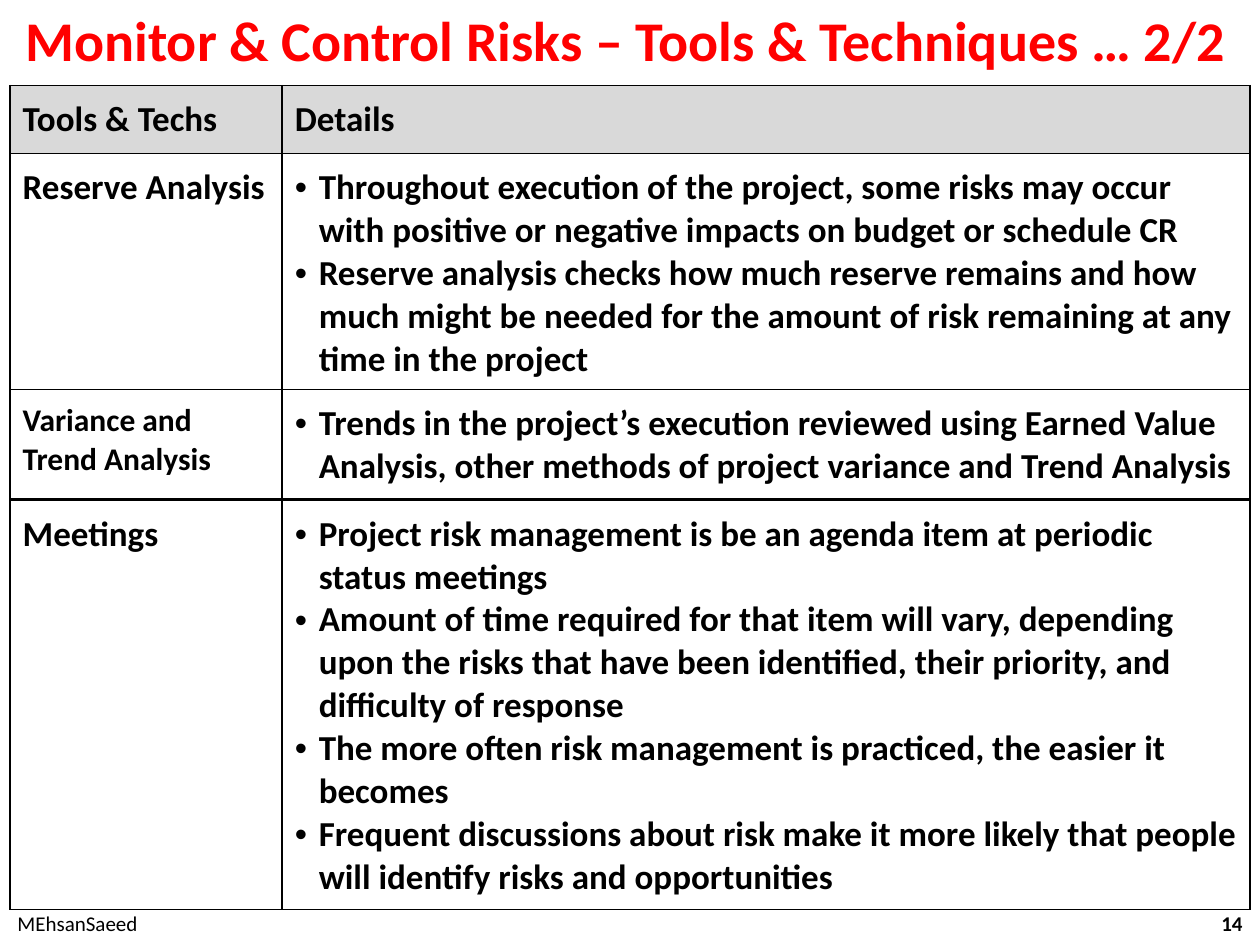
from lxml import etree
from pptx import Presentation
from pptx.dml.color import RGBColor
from pptx.enum.text import MSO_ANCHOR, PP_ALIGN
from pptx.oxml.ns import qn
from pptx.util import Inches, Pt

TOP, MIDDLE, BOTTOM = MSO_ANCHOR.TOP, MSO_ANCHOR.MIDDLE, MSO_ANCHOR.BOTTOM
LEFT, CENTER, RIGHT = PP_ALIGN.LEFT, PP_ALIGN.CENTER, PP_ALIGN.RIGHT
RED = RGBColor(0xFF, 0x00, 0x00)
BLACK = RGBColor(0x00, 0x00, 0x00)
GRAY = RGBColor(0xD9, 0xD9, 0xD9)

GRID_COLUMNS, GRID_ROWS = 100, 75
TABLE_LEFT = 0.8
TABLE_COLUMNS = (21.6, 76.8)

HEADER = ("Tools & Techs", ["Details"])
RESERVE = ("Reserve Analysis", [
    "Throughout execution of the project, some risks may occur with positive or negative impacts on budget or schedule CR",
    "Reserve analysis checks how much reserve remains and how much might be needed for the amount of risk remaining at any time in the project",
])
VARIANCE = ("Variance and Trend Analysis", [
    "Trends in the project’s execution reviewed using Earned Value Analysis, other methods of project variance and Trend Analysis",
])
MEETINGS = ("Meetings", [
    "Project risk management is be an agenda item at periodic status meetings",
    "Amount of time required for that item will vary, depending upon the risks that have been identified, their priority, and difficulty of response",
    "The more often risk management is practiced, the easier it becomes",
    "Frequent discussions about risk make it more likely that people will identify risks and opportunities",
])


class SlideBuilder:
    font = "Calibri"
    body_size = 20
    cell_margin = Inches(0.1)
    bullet_indent = Inches(0.19)
    border_width = Pt(1)

    def __init__(self, presentation):
        self.column = presentation.slide_width / GRID_COLUMNS
        self.row = presentation.slide_height / GRID_ROWS
        self.slide = presentation.slides.add_slide(presentation.slide_layouts[5])

    def box(self, left, top, width, height):
        return (round(left * self.column), round(top * self.row),
                round(width * self.column), round(height * self.row))

    def format_text(self, text_frame, size, color=BLACK, bold=True, align=LEFT):
        for paragraph in text_frame.paragraphs:
            paragraph.alignment = align
            for run in paragraph.runs:
                run.font.name = self.font
                run.font.size = Pt(size)
                run.font.bold = bold
                run.font.color.rgb = color

    def title(self, text):
        shape = self.slide.shapes.title
        shape.left, shape.top, shape.width, shape.height = self.box(0, 0, 100, 6.2)
        text_frame = shape.text_frame
        text_frame.text = text
        text_frame.vertical_anchor = MIDDLE
        text_frame.margin_left = Inches(0.2)
        text_frame.margin_right = text_frame.margin_top = text_frame.margin_bottom = 0
        self.format_text(text_frame, 32, RED)

    def footer(self, text, left, width, align, bold):
        shape = self.slide.shapes.add_textbox(*self.box(left, 71.3, width, 4))
        text_frame = shape.text_frame
        text_frame.word_wrap = True
        text_frame.vertical_anchor = MIDDLE
        text_frame.text = text
        self.format_text(text_frame, 12, bold=bold, align=align)

    def table(self, top, heights, entries, label_size=body_size):
        frame = self.slide.shapes.add_table(
            len(entries), len(TABLE_COLUMNS),
            *self.box(TABLE_LEFT, top, sum(TABLE_COLUMNS), sum(heights)))
        table = frame.table
        table.first_row = table.horz_banding = False
        for column, width in zip(table.columns, TABLE_COLUMNS):
            column.width = round(width * self.column)
        for index, (height, entry) in enumerate(zip(heights, entries)):
            table.rows[index].height = round(height * self.row)
            label, details = entry
            is_header = entry is HEADER
            self.cell(table.cell(index, 0), [label], label_size, is_header)
            self.cell(table.cell(index, 1), details, self.body_size, is_header,
                      bulleted=not is_header)

    def cell(self, cell, lines, size, is_header, bulleted=False):
        cell.margin_left = cell.margin_right = self.cell_margin
        cell.margin_top = cell.margin_bottom = self.cell_margin
        cell.vertical_anchor = BOTTOM if is_header else TOP
        cell.text_frame.text = "\n".join(lines)
        self.format_text(cell.text_frame, size)
        if bulleted:
            for paragraph in cell.text_frame.paragraphs:
                self.bullet(paragraph)
        self.borders(cell)
        if is_header:
            cell.fill.solid()
            cell.fill.fore_color.rgb = GRAY
        else:
            cell.fill.background()

    def bullet(self, paragraph):
        properties = paragraph._p.get_or_add_pPr()
        properties.set("marL", str(self.bullet_indent))
        properties.set("indent", str(-self.bullet_indent))
        etree.SubElement(properties, qn("a:buFont"), typeface="Arial")
        etree.SubElement(properties, qn("a:buChar"), char="•")

    def borders(self, cell):
        properties = cell._tc.get_or_add_tcPr()
        for side in ("L", "R", "T", "B"):
            line = etree.SubElement(properties, qn(f"a:ln{side}"), w=str(self.border_width))
            fill = etree.SubElement(line, qn("a:solidFill"))
            etree.SubElement(fill, qn("a:srgbClr"), val=str(BLACK))


def main():
    presentation = Presentation()
    presentation.slide_width, presentation.slide_height = Inches(10), Inches(7.5)
    builder = SlideBuilder(presentation)
    builder.title("Monitor & Control Risks – Tools & Techniques … 2/2")
    builder.footer("14", 76.3, 23.3, RIGHT, bold=True)
    builder.table(6.8, (5.4, 18.7), (HEADER, RESERVE))
    builder.table(30.9, (8.7,), (VARIANCE,), label_size=18)
    builder.table(39.7, (32.5,), (MEETINGS,))
    builder.footer("MEhsanSaeed", -0.1, 12.5, CENTER, bold=False)
    presentation.save("out.pptx")


if __name__ == "__main__":
    main()
